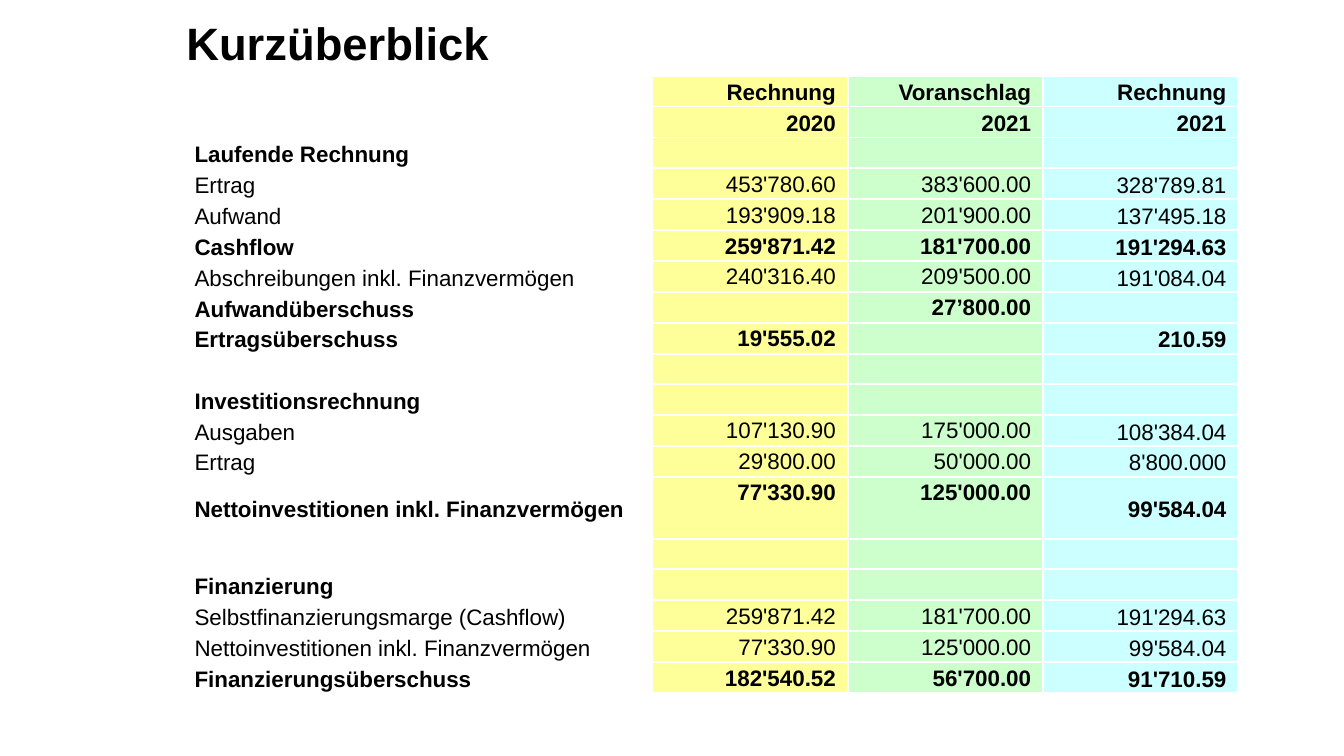
from lxml.etree import SubElement
from pptx import Presentation
from pptx.dml.color import RGBColor
from pptx.enum.text import MSO_ANCHOR, PP_ALIGN
from pptx.oxml.ns import qn
from pptx.util import Emu, Pt

PX = 6350
BLACK = RGBColor(0x00, 0x00, 0x00)
WHITE = RGBColor(0xFF, 0xFF, 0xFF)
YELLOW = RGBColor(0xFF, 0xFF, 0x99)
GREEN = RGBColor(0xCC, 0xFF, 0xCC)
CYAN = RGBColor(0xCC, 0xFF, 0xFF)

COLUMN_FILLS = [None, YELLOW, GREEN, CYAN]
COLUMN_WIDTHS = [671, 279, 279, 279]
ROW_HEIGHT, TALL_ROW_HEIGHT, TALL_ROW = 43, 89, 13
HEADER_ROWS = 2
BOLD, PLAIN = True, False

OVERVIEW = [
    (BOLD, "", "Rechnung", "Voranschlag", "Rechnung"),
    (BOLD, "", "2020", "2021", "2021"),
    (BOLD, "Laufende Rechnung", "", "", ""),
    (PLAIN, "Ertrag", "453'780.60", "383'600.00", "328'789.81"),
    (PLAIN, "Aufwand", "193'909.18", "201'900.00", "137'495.18"),
    (BOLD, "Cashflow", "259'871.42", "181'700.00", "191'294.63"),
    (PLAIN, "Abschreibungen inkl. Finanzvermögen", "240'316.40", "209'500.00", "191'084.04"),
    (BOLD, "Aufwandüberschuss", "", "27’800.00", ""),
    (BOLD, "Ertragsüberschuss", "19'555.02", "", "210.59"),
    (PLAIN, "", "", "", ""),
    (BOLD, "Investitionsrechnung", "", "", ""),
    (PLAIN, "Ausgaben", "107'130.90", "175'000.00", "108'384.04"),
    (PLAIN, "Ertrag", "29'800.00", "50'000.00", "8'800.000"),
    (BOLD, "Nettoinvestitionen inkl. Finanzvermögen", "77'330.90", "125'000.00", "99'584.04"),
    (PLAIN, "", "", "", ""),
    (BOLD, "Finanzierung", "", "", ""),
    (PLAIN, "Selbstfinanzierungsmarge (Cashflow)", "259'871.42", "181'700.00", "191'294.63"),
    (PLAIN, "Nettoinvestitionen inkl. Finanzvermögen", "77'330.90", "125'000.00", "99'584.04"),
    (BOLD, "Finanzierungsüberschuss", "182'540.52", "56'700.00", "91'710.59"),
]


def px(length):
    return Emu(length * PX)


class Deck:
    font_name = "Arial"
    title_size = Pt(32.4)
    table_size = Pt(16)

    def __init__(self, width, height):
        self.presentation = Presentation()
        self.presentation.slide_width = px(width)
        self.presentation.slide_height = px(height)
        self.slide = self.presentation.slides.add_slide(self.presentation.slide_layouts[6])

    def run(self, paragraph, wording, size, bold):
        run = paragraph.add_run()
        run.text = wording
        run.font.name = self.font_name
        run.font.size = size
        run.font.bold = bold
        run.font.color.rgb = BLACK

    def title(self, wording, left, top, width, height):
        heading = self.slide.shapes.add_textbox(px(left), px(top), px(width), px(height))
        frame = heading.text_frame
        frame.word_wrap = True
        frame.vertical_anchor = MSO_ANCHOR.MIDDLE
        frame.paragraphs[0].line_spacing = 0.9
        self.run(frame.paragraphs[0], wording, self.title_size, True)

    def borders(self, cell):
        properties = cell._tc.get_or_add_tcPr()
        for position, side in enumerate(("a:lnL", "a:lnR", "a:lnT", "a:lnB")):
            line = SubElement(properties, qn(side), w=str(Pt(1.5)))
            properties.insert(position, line)
            fill = SubElement(line, qn("a:solidFill"))
            SubElement(fill, qn("a:srgbClr"), val=str(WHITE))

    def cell(self, cell, wording, bold, fill, align, anchor):
        cell.margin_left = cell.margin_right = px(17)
        cell.margin_top = cell.margin_bottom = 0
        cell.vertical_anchor = anchor
        if fill is None:
            cell.fill.background()
        else:
            cell.fill.solid()
            cell.fill.fore_color.rgb = fill
        self.borders(cell)
        if wording:
            paragraph = cell.text_frame.paragraphs[0]
            paragraph.alignment = align
            paragraph.line_spacing = 1.15
            paragraph.space_after = Pt(10)
            self.run(paragraph, wording, self.table_size, bold)

    def table(self, rows, left, top):
        heights = [TALL_ROW_HEIGHT if i == TALL_ROW else ROW_HEIGHT for i in range(len(rows))]
        frame = self.slide.shapes.add_table(
            len(rows), len(COLUMN_WIDTHS), px(left), px(top),
            px(sum(COLUMN_WIDTHS)), px(sum(heights)))
        table = frame.table
        table.first_row = table.horz_banding = False
        for column, width in zip(table.columns, COLUMN_WIDTHS):
            column.width = px(width)
        for i, (bold, *wordings) in enumerate(rows):
            table.rows[i].height = px(heights[i])
            for j, wording in enumerate(wordings):
                top_aligned = i >= HEADER_ROWS and j in (1, 2)
                anchor = MSO_ANCHOR.TOP if top_aligned else MSO_ANCHOR.MIDDLE
                align = PP_ALIGN.RIGHT if j else PP_ALIGN.LEFT
                self.cell(table.cell(i, j), wording, bold, COLUMN_FILLS[j], align, anchor)


def main():
    deck = Deck(1920, 1080)
    deck.title("Kurzüberblick", 252, 23, 1604, 85)
    deck.table(OVERVIEW, 261, 108)
    deck.presentation.save("out.pptx")


if __name__ == "__main__":
    main()
